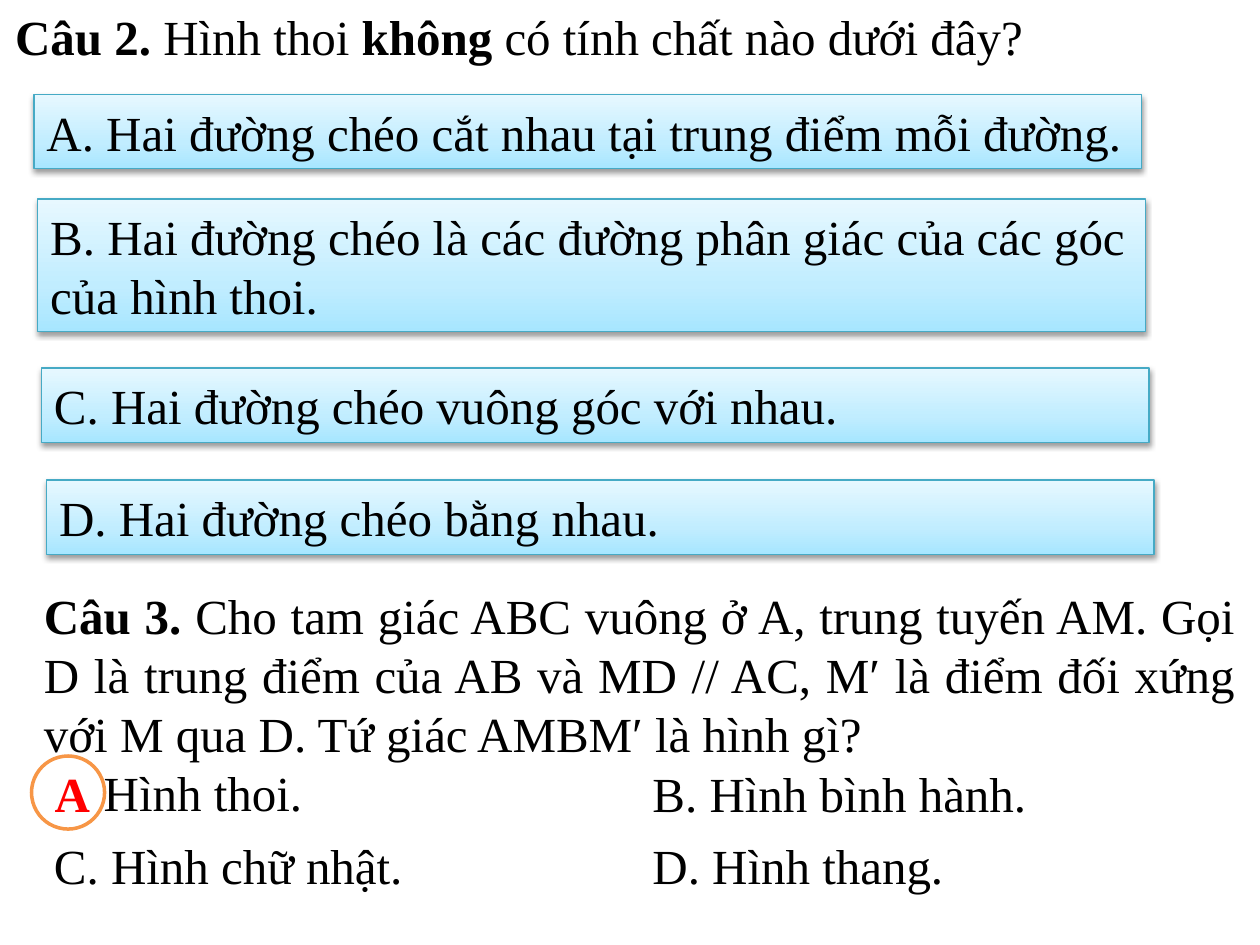
from dataclasses import dataclass

from lxml import etree
from pptx import Presentation
from pptx import util as u
from pptx.dml.color import RGBColor
from pptx.enum import shapes, text
from pptx.oxml.ns import qn


@dataclass(frozen=True)
class Theme:
    font: str = "Times New Roman"
    size: float = 28
    ink: str = "000000"
    mark: str = "FF0000"
    ring: str = "F79646"
    paper: str = "FFFFFF"
    border: str = "46AAC5"
    # Gradient stops: percent, colour
    gradient: tuple = ((0, "A7E6FF"), (35, "C1EDFF"), (100, "E7F8FF"))


@dataclass(frozen=True)
class Box:
    left: float
    top: float
    width: float
    height: float

    def lengths(self) -> list[u.Length]:
        return [u.Inches(v) for v in (self.left, self.top, self.width, self.height)]


@dataclass(frozen=True)
class Run:
    text: str
    bold: bool = False


@dataclass(frozen=True)
class Item:
    box: Box
    paragraphs: tuple[tuple[Run, ...], ...]
    wrap: bool = True


THEME = Theme()
ALIGN = text.PP_ALIGN


def rgb(value: str) -> RGBColor:
    return RGBColor.from_string(value)


def write(tf, paragraphs, align=ALIGN.LEFT, color=THEME.ink) -> None:
    """Fill a text frame, one paragraph per tuple of runs."""
    for i, runs in enumerate(paragraphs):
        p = tf.paragraphs[0] if i == 0 else tf.add_paragraph()
        p.alignment = align
        p.font.name = THEME.font
        p.font.size = u.Pt(THEME.size)
        p.font.color.rgb = rgb(color)
        for run in runs:
            r = p.add_run()
            r.text = run.text
            r.font.bold = run.bold


def add_title(s, item: Item) -> None:
    sp = s.shapes.title
    sp.left, sp.top, sp.width, sp.height = item.box.lengths()
    tf = sp.text_frame
    tf.auto_size = text.MSO_AUTO_SIZE.NONE
    tf.vertical_anchor = text.MSO_ANCHOR.TOP
    write(tf, item.paragraphs)


def add_text(s, item: Item) -> None:
    tf = s.shapes.add_textbox(*item.box.lengths()).text_frame
    tf.word_wrap = item.wrap
    tf.auto_size = text.MSO_AUTO_SIZE.SHAPE_TO_FIT_TEXT
    write(tf, item.paragraphs, ALIGN.JUSTIFY)


def add_shape(s, kind, box: Box, line: str, weight: float):
    sp = s.shapes.add_shape(kind, *box.lengths())
    sp.shadow.inherit = False
    sp.line.color.rgb = rgb(line)
    sp.line.width = u.Pt(weight)
    sp.text_frame.vertical_anchor = text.MSO_ANCHOR.MIDDLE
    return sp


def add_gradient(sp) -> None:
    sp.fill.gradient()
    sp.fill.gradient_angle = 90
    stops = sp._element.spPr.find(".//" + qn("a:gsLst"))
    for old in list(stops):
        stops.remove(old)
    for percent, color in THEME.gradient:
        stop = etree.SubElement(stops, qn("a:gs"), pos=str(percent * 1000))
        etree.SubElement(stop, qn("a:srgbClr"), val=color)


def add_shadow(sp) -> None:
    effects = sp._element.spPr.find(qn("a:effectLst"))
    shadow = etree.SubElement(
        effects, qn("a:outerShdw"), blurRad=str(u.Pt(3.1)), dist=str(u.Pt(1.6)),
        dir="5400000", rotWithShape="0")
    color = etree.SubElement(shadow, qn("a:srgbClr"), val=THEME.ink)
    etree.SubElement(color, qn("a:alpha"), val="38000")


def add_answer(s, item: Item) -> None:
    sp = add_shape(s, shapes.MSO_SHAPE.RECTANGLE, item.box, THEME.border, 0.75)
    add_gradient(sp)
    add_shadow(sp)
    write(sp.text_frame, item.paragraphs)


def add_mark(s, box: Box, letter: str) -> None:
    sp = add_shape(s, shapes.MSO_SHAPE.OVAL, box, THEME.ring, 2)
    sp.fill.solid()
    sp.fill.fore_color.rgb = rgb(THEME.paper)
    write(sp.text_frame, ((Run(letter, True),),), ALIGN.CENTER, THEME.mark)


QUESTION_2 = Item(Box(0.02, 0, 9.81, 0.57), ((
    Run("Câu 2. ", True), Run("Hình thoi "), Run("không ", True),
    Run("có tính chất nào dưới đây?")),))

ANSWERS_2 = [
    Item(Box(left, top, 8.79, height), ((Run(words),),))
    for left, top, height, words in (
        (0.27, 0.75, 0.59, "A. Hai đường chéo cắt nhau tại trung điểm mỗi đường."),
        (0.3, 1.58, 1.05, "B. Hai đường chéo là các đường phân giác của các góc "
                          "của hình thoi."),
        (0.33, 2.92, 0.59, "C. Hai đường chéo vuông góc với nhau."),
        (0.37, 3.81, 0.59, "D. Hai đường chéo bằng nhau."),
    )
]

QUESTION_3 = [
    Item(Box(0.25, 4.6, 9.65, 1.99), (
        (Run("Câu 3. ", True),
         Run("Cho tam giác ABC vuông ở A, trung tuyến AM. Gọi D là trung điểm "
             "của AB và MD // AC, M′ là điểm đối xứng với M qua D. "
             "Tứ giác AMBM′ là hình gì?")),
        (Run("A. Hình thoi."),))),
    Item(Box(0.33, 6.58, 5, 0.57), ((Run("C. Hình chữ nhật."),),)),
    Item(Box(5.08, 6.01, 3.2, 0.57), ((Run("B. Hình bình hành."),),), wrap=False),
    Item(Box(5.08, 6.58, 2.54, 0.57), ((Run("D. Hình thang."),),), wrap=False),
]


def main() -> None:
    prs = Presentation()
    prs.slide_width, prs.slide_height = u.Inches(10), u.Inches(7.5)
    s = prs.slides.add_slide(prs.slide_layouts[5])

    # Question 2 and its answer bars
    add_title(s, QUESTION_2)
    for item in ANSWERS_2:
        add_answer(s, item)

    # Question 3, its options and the ring on the right answer
    for item in QUESTION_3:
        add_text(s, item)
    add_mark(s, Box(0.25, 6, 0.58, 0.58), "A")

    prs.save("out.pptx")


if __name__ == "__main__":
    main()
